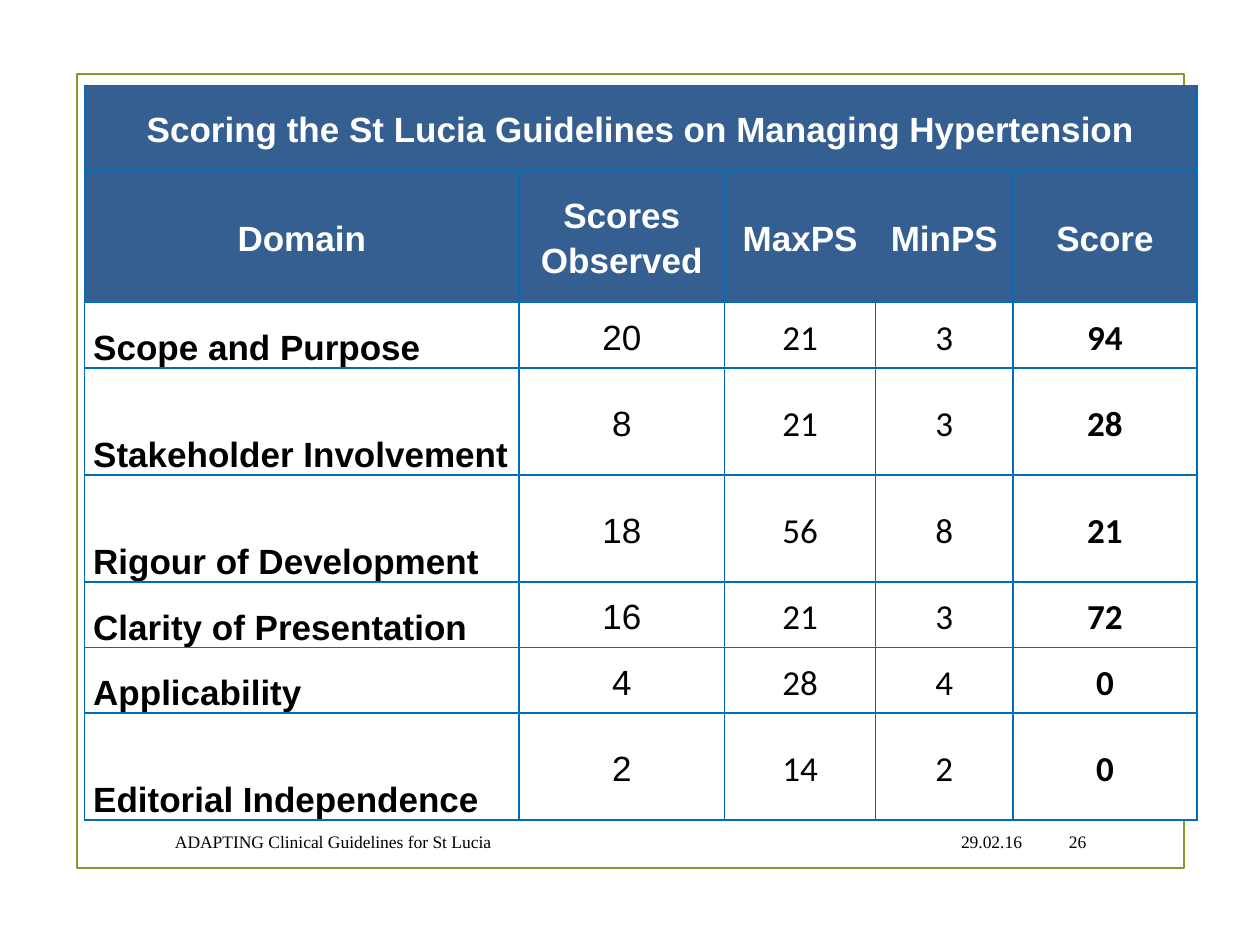
"""Build the slide that scores the St Lucia hypertension guidelines."""
from lxml import etree
from pptx import Presentation
from pptx.dml.color import RGBColor
from pptx.enum.shapes import MSO_SHAPE
from pptx.enum.text import MSO_ANCHOR, PP_ALIGN
from pptx.oxml.ns import qn
from pptx.util import Inches, Pt

RECTANGLE = MSO_SHAPE.RECTANGLE
LEFT, CENTER, RIGHT = PP_ALIGN.LEFT, PP_ALIGN.CENTER, PP_ALIGN.RIGHT
MIDDLE, BOTTOM = MSO_ANCHOR.MIDDLE, MSO_ANCHOR.BOTTOM

BLACK = RGBColor(0x00, 0x00, 0x00)
WHITE = RGBColor(0xFF, 0xFF, 0xFF)
HEADER_BLUE = RGBColor(0x36, 0x5F, 0x91)
BORDER_BLUE = RGBColor(0x00, 0x6D, 0xB6)
FRAME_GREEN = RGBColor(0x83, 0x99, 0x2A)

TITLE = "Scoring the St Lucia Guidelines on Managing Hypertension"
HEADINGS = ["Domain", "Scores Observed", "MaxPS", "MinPS", "Score"]
SCORES = [
    ("Scope and Purpose", 20, 21, 3, 94),
    ("Stakeholder Involvement", 8, 21, 3, 28),
    ("Rigour of Development", 18, 56, 8, 21),
    ("Clarity of Presentation", 16, 21, 3, 72),
    ("Applicability", 4, 28, 4, 0),
    ("Editorial Independence", 2, 14, 2, 0),
]
COLUMN_WIDTHS = [3.45, 1.63, 1.2, 1.09, 1.46]
ROW_HEIGHTS = [0.67, 1.05, 0.52, 0.85, 0.85, 0.52, 0.52, 0.85]
HEADER_FORMAT = {"font": "Arial", "bold": True, "color": WHITE, "align": CENTER}
BODY_FORMATS = [
    {"font": "Arial", "bold": True, "space_after": 3},
    {"font": "Arial", "align": CENTER},
    {"font": "Calibri", "align": CENTER},
    {"font": "Calibri", "align": CENTER},
    {"font": "Calibri", "bold": True, "align": CENTER},
]


def write_text(text_frame, text, font, size=20, color=BLACK, bold=False,
               align=LEFT, line_spacing=1.0, space_after=0):
    paragraph = text_frame.paragraphs[0]
    paragraph.alignment = align
    paragraph.line_spacing = line_spacing
    paragraph.space_after = Pt(space_after)
    run = paragraph.add_run()
    run.text = text
    run.font.name = font
    run.font.size = Pt(size)
    run.font.bold = bold
    run.font.color.rgb = color


class SlideBuilder:
    def __init__(self, slide):
        self.slide = slide
        self.footer_format = {"font": "Times New Roman", "size": 10}

    def frame(self, left, top, width, height):
        shape = self.slide.shapes.add_shape(
            RECTANGLE, Inches(left), Inches(top), Inches(width), Inches(height))
        shape.shadow.inherit = False
        shape.fill.background()
        shape.line.color.rgb = FRAME_GREEN
        shape.line.width = Pt(1.25)

    def footer(self, text, left, width, align=LEFT):
        shape = self.slide.shapes.add_textbox(
            Inches(left), Inches(6.52), Inches(width), Inches(0.31))
        shape.text_frame.word_wrap = True
        shape.text_frame.vertical_anchor = MIDDLE
        write_text(shape.text_frame, text, align=align, **self.footer_format)

    def cell_style(self, cell, fill, anchor):
        cell.margin_left = cell.margin_right = Inches(0.07)
        cell.margin_top = cell.margin_bottom = 0
        cell.vertical_anchor = anchor
        properties = cell._tc.get_or_add_tcPr()
        for side in ("a:lnL", "a:lnR", "a:lnT", "a:lnB"):
            line = etree.SubElement(properties, qn(side), w=str(Pt(1)))
            solid = etree.SubElement(line, qn("a:solidFill"))
            etree.SubElement(solid, qn("a:srgbClr"), val=str(BORDER_BLUE))
        cell.fill.solid()
        cell.fill.fore_color.rgb = fill

    def score_table(self, left, top):
        table = self.slide.shapes.add_table(
            len(ROW_HEIGHTS), len(COLUMN_WIDTHS), Inches(left), Inches(top),
            Inches(sum(COLUMN_WIDTHS)), Inches(sum(ROW_HEIGHTS))).table
        for column, width in zip(table.columns, COLUMN_WIDTHS):
            column.width = Inches(width)
        for row, height in zip(table.rows, ROW_HEIGHTS):
            row.height = Inches(height)
        table.cell(0, 0).merge(table.cell(0, len(COLUMN_WIDTHS) - 1))
        for row_index, values in enumerate([(TITLE,), HEADINGS, *SCORES]):
            is_header = row_index < 2
            for column_index, body_format in enumerate(BODY_FORMATS):
                cell = table.cell(row_index, column_index)
                is_domain = not is_header and column_index == 0
                self.cell_style(cell, HEADER_BLUE if is_header else WHITE,
                                BOTTOM if is_domain else MIDDLE)
                if column_index < len(values):
                    write_text(cell.text_frame, str(values[column_index]),
                               line_spacing=1.15,
                               **(HEADER_FORMAT if is_header else body_format))


def main():
    presentation = Presentation()
    presentation.slide_width = Inches(10)
    presentation.slide_height = Inches(7.5)
    builder = SlideBuilder(
        presentation.slides.add_slide(presentation.slide_layouts[6]))
    builder.frame(0.61, 0.59, 8.79, 6.3)
    builder.footer("29.02.16", 6.95, 1.26, RIGHT)
    builder.footer("26", 8.29, 0.43, RIGHT)
    builder.score_table(0.67, 0.68)
    builder.footer("ADAPTING Clinical Guidelines for St Lucia", 1.29, 5.58)
    presentation.save("out.pptx")


if __name__ == "__main__":
    main()
